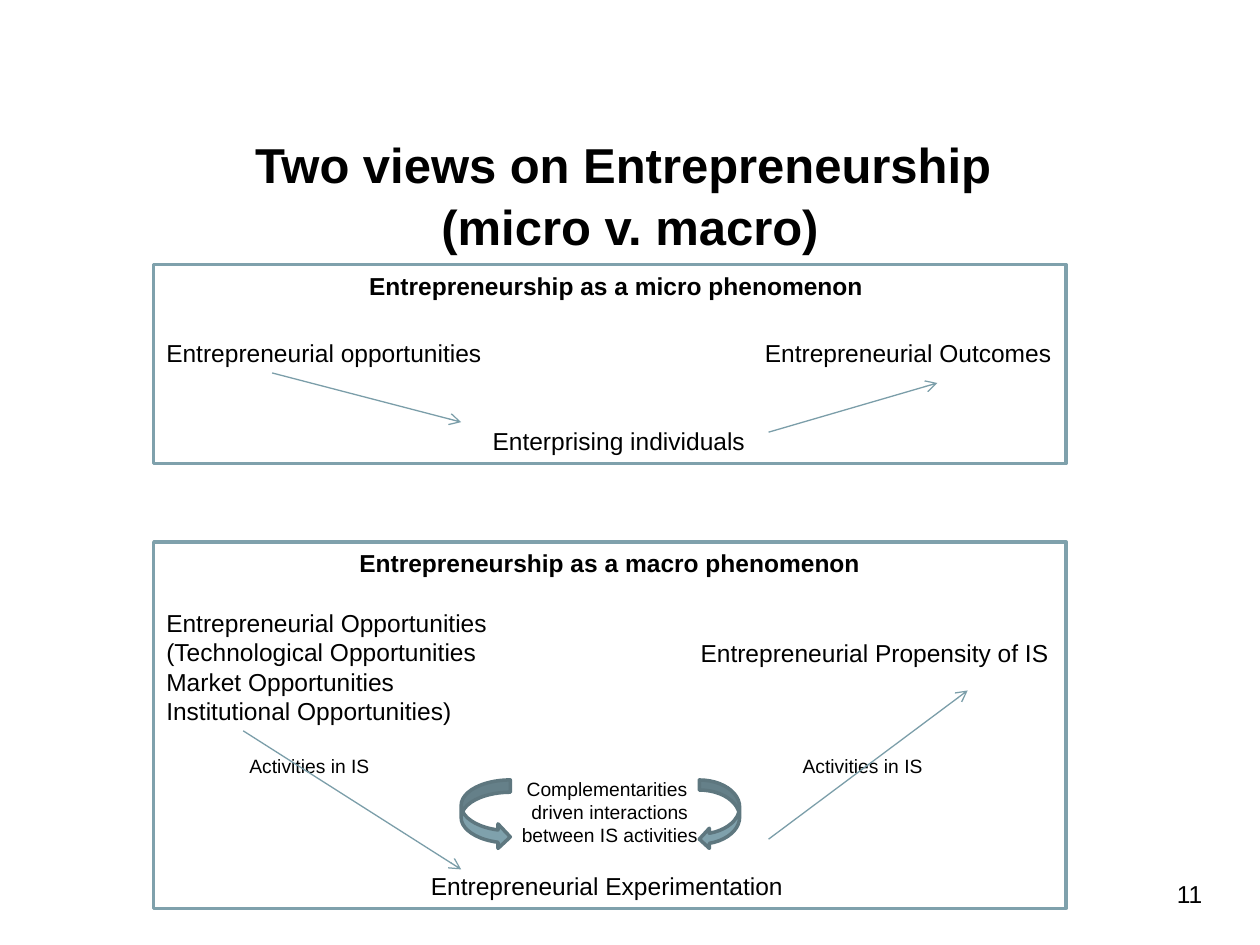
"""Build a slide that contrasts the micro and macro views on entrepreneurship."""
from lxml.etree import SubElement
from pptx import Presentation
from pptx.dml.color import RGBColor as Rgb
from pptx.enum.shapes import MSO_CONNECTOR as Link, MSO_SHAPE as Form
from pptx.enum.text import MSO_ANCHOR as Anchor, PP_ALIGN as Align
from pptx.oxml.ns import qn
from pptx.util import Inches, Pt

THEME = {
    "font": "Arial",
    "ink": Rgb.from_string("000000"),
    "paper": Rgb.from_string("FFFFFF"),
    "teal": Rgb.from_string("7FA1AC"),
    "edge": Rgb.from_string("5E777F"),
    "arrow": Rgb.from_string("7B9EA9"),
    "title": Pt(28),
    "body": Pt(14),
    "small": Pt(11),
}


def write(shape, text, size, align, bold=False, anchor=Anchor.TOP):
    frame = shape.text_frame
    frame.word_wrap = True
    frame.vertical_anchor = anchor
    frame.text = text
    for para in frame.paragraphs:
        para.alignment = align
        for run in para.runs:
            run.font.name = THEME["font"]
            run.font.size = THEME[size]
            run.font.bold = bold
            run.font.color.rgb = THEME["ink"]
    return frame


def draw(form, box, fill, line):
    shape = slide.shapes.add_shape(form, *map(Inches, box))
    shape.shadow.inherit = False
    shape.fill.solid()
    shape.fill.fore_color.rgb = THEME[fill]
    shape.line.color.rgb = THEME[line]
    shape.line.width = Pt(2)
    return shape


deck = Presentation()
deck.slide_width, deck.slide_height = Inches(10), Inches(7.5)
slide = deck.slides.add_slide(deck.slide_layouts[6])

title = slide.shapes.add_textbox(*map(Inches, (0.36, 0.99, 9.28, 0.95)))
frame = write(title, "Two views on Entrepreneurship \v(micro v. macro)", "title", Align.CENTER, True)
frame.paragraphs[0].line_spacing = 1.06
number = slide.shapes.add_textbox(*map(Inches, (8.54, 6.93, 1.1, 0.52)))
write(number, "11", "body", Align.RIGHT)

panels = [
    ("Entrepreneurship as a micro phenomenon", 2.1, 1.58, 0.2),
    ("Entrepreneurship as a macro phenomenon", 4.3, 2.91, 0.1),
]
for text, top, height, inset in panels:
    panel = draw(Form.RECTANGLE, (1.22, top, 7.24, height), "paper", "teal")
    frame = write(panel, text, "body", Align.CENTER, True)
    frame.margin_left = Inches(inset)

labels = [
    ("Entrepreneurial opportunities", 1.32, 2.8, 2.7, "body", Align.LEFT),
    ("Entrepreneurial Outcomes", 6.07, 2.8, 2.38, "body", Align.LEFT),
    ("Enterprising individuals", 3.91, 3.5, 2.2, "body", Align.LEFT),
    ("Entrepreneurial Opportunities\n(Technological Opportunities\n"
     "Market Opportunities\nInstitutional Opportunities)", 1.32, 5.29, 2.7, "body", Align.LEFT),
    ("Entrepreneurial Propensity of IS", 5.56, 5.18, 2.88, "body", Align.LEFT),
    ("Activities in IS", 1.98, 6.08, 1.2, "small", Align.LEFT),
    ("Activities in IS", 6.37, 6.08, 1.2, "small", Align.LEFT),
    ("Complementarities \ndriven interactions\nbetween IS activities", 4.09, 6.44, 1.5, "small", Align.CENTER),
    ("Entrepreneurial Experimentation", 3.42, 7.03, 3, "body", Align.LEFT),
]
for text, left, mid, width, size, align in labels:
    height = THEME[size].inches * 1.15 * len(text.split("\n"))
    box = slide.shapes.add_textbox(*map(Inches, (left, mid - height / 2, width, height)))
    frame = write(box, text, size, align, anchor=Anchor.MIDDLE)
    frame.margin_left = frame.margin_right = frame.margin_top = frame.margin_bottom = 0

arrows = [
    (2.16, 2.96, 3.66, 3.35),
    (6.1, 3.43, 7.44, 3.04),
    (1.93, 5.8, 3.66, 6.9),
    (6.1, 6.66, 7.68, 5.48),
]
for ends in arrows:
    arrow = slide.shapes.add_connector(Link.STRAIGHT, *map(Inches, ends))
    arrow.line.color.rgb = THEME["arrow"]
    arrow.line.width = Pt(0.75)
    SubElement(arrow.line._get_or_add_ln(), qn("a:tailEnd"), type="arrow")
    SubElement(arrow._element.spPr, qn("a:effectLst"))

draw(Form.CURVED_RIGHT_ARROW, (3.66, 6.19, 0.39, 0.55), "teal", "edge")
draw(Form.CURVED_LEFT_ARROW, (5.55, 6.19, 0.32, 0.55), "teal", "edge")

deck.save("out.pptx")
